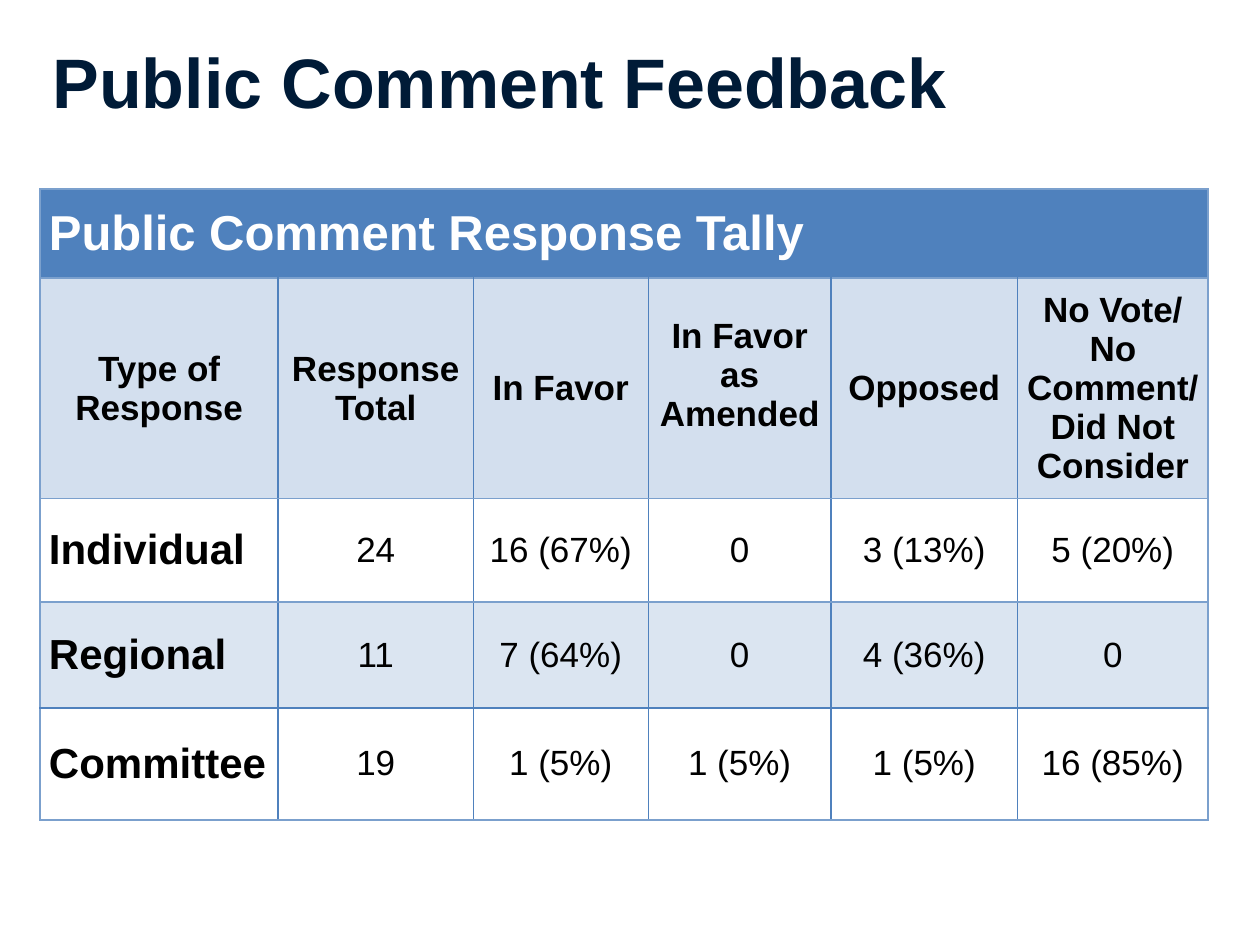
from dataclasses import dataclass

from pptx import Presentation
from pptx.dml.color import RGBColor
from pptx.enum import text as tx
from pptx.oxml import ns, xmlchemy as xc
from pptx.util import Pt


@dataclass(frozen=True)
class Theme:
    font: str = "Arial"
    navy: str = "001B37"
    blue: str = "4F81BD"
    edge: str = "7BA0CD"
    head: str = "D3DFEE"
    band: str = "DBE5F1"
    white: str = "FFFFFF"
    black: str = "000000"
    title: int = 40
    tally: int = 28
    label: int = 24
    body: int = 20


T = Theme()
MID = tx.PP_ALIGN.CENTER
FULL = tx.PP_ALIGN.JUSTIFY
COLS = [136, 111.5, 100, 104.5, 106.5, 109]
ROWS = [51, 126, 59, 60.5, 64]
FILLS = [T.blue, T.head, T.white, T.band, None]
TALLY = "Public Comment Response Tally"
HEADS = ["Type of Response", "Response Total", "In Favor",
         "In Favor as Amended", "Opposed",
         "No Vote/\nNo Comment/ Did Not Consider"]
DATA = [
    ["Individual", "24", "16 (67%)", "0", "3 (13%)", "5 (20%)"],
    ["Regional", "11", "7 (64%)", "0", "4 (36%)", "0"],
    ["Committee", "19", "1 (5%)", "1 (5%)", "1 (5%)", "16 (85%)"],
]


def write(frame, words, size, color, bold=True, align=None):
    for i, line in enumerate(words.split("\n")):
        para = frame.add_paragraph() if i else frame.paragraphs[0]
        para.alignment = align
        run = para.add_run()
        run.text = line
        run.font.name = T.font
        run.font.size = Pt(size)
        run.font.bold = bold
        run.font.color.rgb = RGBColor.from_string(color)


def add_title(slide):
    box = slide.shapes.add_textbox(Pt(23), Pt(12.5), Pt(688), Pt(67))
    frame = box.text_frame
    frame.word_wrap = True
    frame.vertical_anchor = tx.MSO_ANCHOR.MIDDLE
    write(frame, "Public Comment Feedback", T.title, T.navy)


def edge(cell, side, color):
    props = cell._tc.get_or_add_tcPr()
    line = xc.OxmlElement(f"a:ln{side}")
    line.set("w", str(Pt(1)))
    fill = xc.OxmlElement("a:solidFill")
    tint = xc.OxmlElement("a:srgbClr")
    tint.set("val", color)
    fill.append(tint)
    line.append(fill)
    props.append(line)


def style(cell, row, col):
    last = len(ROWS) - 1
    sides = {
        "L": T.blue if row and col else T.edge,
        "R": T.blue if row and col < len(COLS) - 1 else T.edge,
        "T": T.blue if row == last else T.edge,
        "B": T.blue if row == last - 1 else T.edge,
    }
    for side, color in sides.items():
        edge(cell, side, color)
    if FILLS[row]:
        cell.fill.solid()
        cell.fill.fore_color.rgb = RGBColor.from_string(FILLS[row])
    else:
        cell.fill.background()
    cell.margin_left = cell.margin_right = Pt(5)
    cell.margin_top = cell.margin_bottom = 0
    cell.vertical_anchor = tx.MSO_ANCHOR.MIDDLE


def add_tally(slide):
    shape = slide.shapes.add_table(len(ROWS), len(COLS), Pt(23), Pt(108),
                                   Pt(sum(COLS)), Pt(sum(ROWS)))
    table = shape.table
    for part, width in zip(table.columns, COLS):
        part.width = Pt(width)
    for part, height in zip(table.rows, ROWS):
        part.height = Pt(height)
    for row in range(len(ROWS)):
        for col in range(len(COLS)):
            style(table.cell(row, col), row, col)

    top = table.cell(0, 0)
    top.merge(table.cell(0, len(COLS) - 1))
    write(top.text_frame, TALLY, T.tally, T.white, align=FULL)
    for col, words in enumerate(HEADS):
        write(table.cell(1, col).text_frame, words, T.body, T.black, align=MID)
    amend = table.cell(1, 3)
    amend.vertical_anchor = tx.MSO_ANCHOR.TOP
    amend.margin_top = Pt(22)
    for row, (name, *votes) in enumerate(DATA, 2):
        write(table.cell(row, 0).text_frame, name, T.label, T.black, align=FULL)
        for col, vote in enumerate(votes, 1):
            write(table.cell(row, col).text_frame, vote, T.body, T.black,
                  False, MID)


def main():
    deck = Presentation()
    deck.slide_width, deck.slide_height = Pt(720), Pt(540)
    slide = deck.slides.add_slide(deck.slide_layouts[6])
    add_tally(slide)
    add_title(slide)
    deck.save("out.pptx")


if __name__ == "__main__":
    main()
